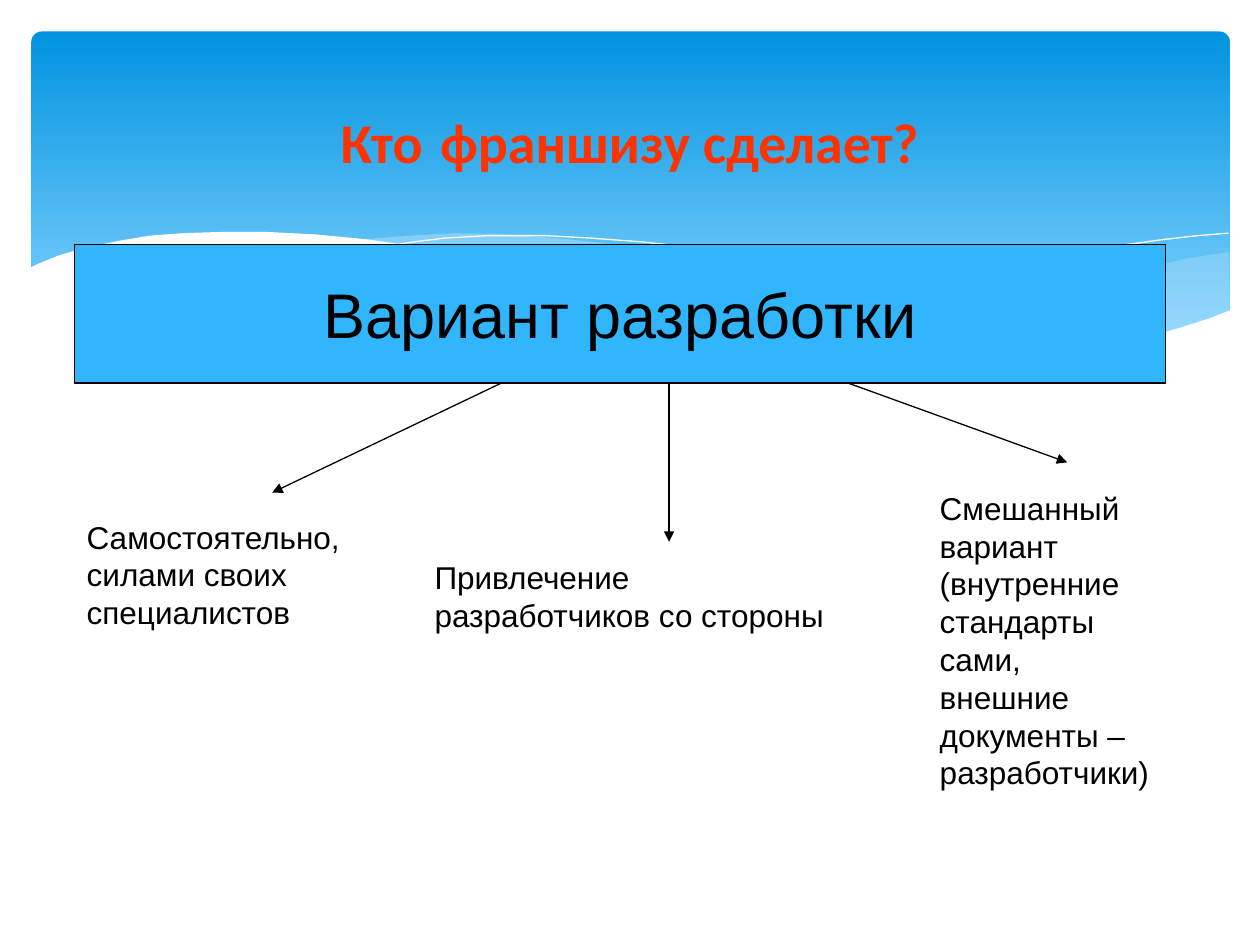
"""Build a slide that shows three ways to develop a franchise."""
from lxml.etree import SubElement
from pptx import Presentation
from pptx.dml.color import RGBColor
from pptx.enum.shapes import MSO_CONNECTOR, MSO_SHAPE
from pptx.enum.text import MSO_ANCHOR, PP_ALIGN
from pptx.oxml.ns import qn
from pptx.util import Inches, Pt

COLORS = {
    "sky top": "0293E0",
    "sky bottom": "83D3FE",
    "mist": "C6E7FC",
    "white": "FFFFFF",
    "panel": "31B6FD",
    "title": "FF3300",
    "ink": "000000",
}
COLUMNS = 1000

deck = Presentation()
deck.slide_width, deck.slide_height = Inches(10), Inches(7.5)
cell = deck.slide_width // COLUMNS
slide = deck.slides.add_slide(deck.slide_layouts[6])
shapes = slide.shapes


def color(name):
    return RGBColor.from_string(COLORS[name])


def add_run(paragraph, text, size, font, tone, bold=False):
    run = paragraph.add_run()
    run.text = text
    run.font.size, run.font.name, run.font.bold = Pt(size), font, bold
    run.font.color.rgb = color(tone)


sky = shapes.add_shape(MSO_SHAPE.ROUNDED_RECTANGLE, *(n * cell for n in (25, 25, 951, 270)))
sky.adjustments[0] = 0.03
sky.shadow.inherit = False
sky.line.fill.background()
sky.fill.gradient()
sky.fill.gradient_angle = 270
for stop, tone, position in zip(sky.fill.gradient_stops, ("sky top", "sky bottom"), (0, 0.9)):
    stop.color.rgb = color(tone)
    stop.position = position

right_mist = [
    (976, 200), (948, 204), (921, 210), (891, 216), (861, 223), (805, 237), (753, 248),
    (706, 257), (661, 265), (691, 269), (719, 272), (745, 275), (769, 277), (803, 278),
    (835, 277), (863, 275), (889, 272), (913, 267), (935, 262), (949, 257), (963, 252), (976, 247),
]
middle_mist = [
    (893, 273), (866, 269), (807, 260), (741, 247), (668, 231), (629, 222), (598, 214),
    (569, 208), (541, 203), (514, 198), (489, 194), (442, 189), (399, 186), (361, 185),
    (328, 187), (299, 189), (286, 191), (323, 196), (362, 203), (404, 211), (449, 222),
    (530, 240), (584, 252), (634, 261), (680, 268), (722, 274), (761, 277), (796, 278),
    (838, 278), (867, 276), (893, 273),
]
long_crest = [
    (309, 195), (328, 192), (353, 189), (387, 187), (433, 187), (469, 189), (510, 192),
    (556, 197), (608, 204), (665, 213), (727, 226), (795, 241), (869, 261), (907, 272),
]
right_crest = [
    (613, 257), (653, 246), (695, 235), (748, 223), (806, 210), (866, 199), (895, 194),
    (924, 190), (951, 187), (975, 185),
]
white_wave = [
    (977, 246), (959, 253), (940, 259), (920, 265), (899, 269), (875, 273), (850, 275),
    (823, 277), (793, 276), (761, 275), (726, 272), (688, 268), (648, 262), (603, 254),
    (555, 245), (503, 233), (447, 220), (391, 207), (340, 197), (292, 190), (250, 186),
    (211, 184), (177, 184), (146, 185), (119, 187), (95, 191), (76, 195), (59, 199),
    (46, 203), (36, 207), (29, 210), (23, 213), (23, 329), (977, 329),
]
waves = [
    (right_mist, "mist", 29),
    (middle_mist, "mist", 40),
    (long_crest, None, None),
    (right_crest, None, None),
    (white_wave, "white", 100),
]
for points, tone, opacity in waves:
    builder = shapes.build_freeform(*points[0], scale=cell)
    builder.add_line_segments(points[1:], close=tone is not None)
    wave = builder.convert_to_shape()
    wave.shadow.inherit = False
    if tone:
        wave.line.fill.background()
        wave.fill.solid()
        wave.fill.fore_color.rgb = color(tone)
        tint = wave.fill._xPr.find(qn("a:solidFill"))[0]
        SubElement(tint, qn("a:alpha"), val=str(opacity * 1000))
    else:
        wave.fill.background()
        wave.line.color.rgb = color("white")
        wave.line.width = Pt(0)

title = shapes.add_textbox(*(n * cell for n in (50, 37, 900, 137))).text_frame
title.word_wrap = True
title.vertical_anchor = MSO_ANCHOR.MIDDLE
question = title.paragraphs[0]
question.alignment = PP_ALIGN.CENTER
add_run(question, "Кто", 32, "Calibri", "title", True)
add_run(question, " ", 44, "Calibri", "white")
add_run(question, "франшизу сделает?", 32, "Calibri", "title", True)

panel = shapes.add_shape(MSO_SHAPE.RECTANGLE, *(n * cell for n in (59, 194, 866, 110)))
panel.shadow.inherit = False
panel.fill.solid()
panel.fill.fore_color.rgb = color("panel")
panel.line.color.rgb = color("ink")
panel.line.width = Pt(0.75)
panel.text_frame.word_wrap = False
panel.text_frame.vertical_anchor = MSO_ANCHOR.MIDDLE
heading = panel.text_frame.paragraphs[0]
heading.alignment = PP_ALIGN.CENTER
add_run(heading, "Вариант разработки", 36, "Arial", "ink")

options = [
    ("Самостоятельно, силами своих специалистов",
     (59, 406, 236, 100), (398, 304, 216, 391)),
    ("Привлечение разработчиков со стороны",
     (335, 438, 339, 70), (531, 304, 531, 430)),
    ("Смешанный вариант (внутренние стандарты сами, внешние документы – разработчики)",
     (736, 383, 189, 250), (673, 304, 847, 367)),
]
for wording, box, ends in options:
    arrow = shapes.add_connector(MSO_CONNECTOR.STRAIGHT, *(n * cell for n in ends))
    arrow.line.color.rgb = color("ink")
    arrow.line.width = Pt(0.75)
    SubElement(arrow.line._get_or_add_ln(), qn("a:tailEnd"), type="triangle")
    SubElement(arrow._element.spPr, qn("a:effectLst"))
    option = shapes.add_textbox(*(n * cell for n in box)).text_frame
    option.word_wrap = True
    add_run(option.paragraphs[0], wording, 18, "Arial", "ink")

deck.save("out.pptx")
